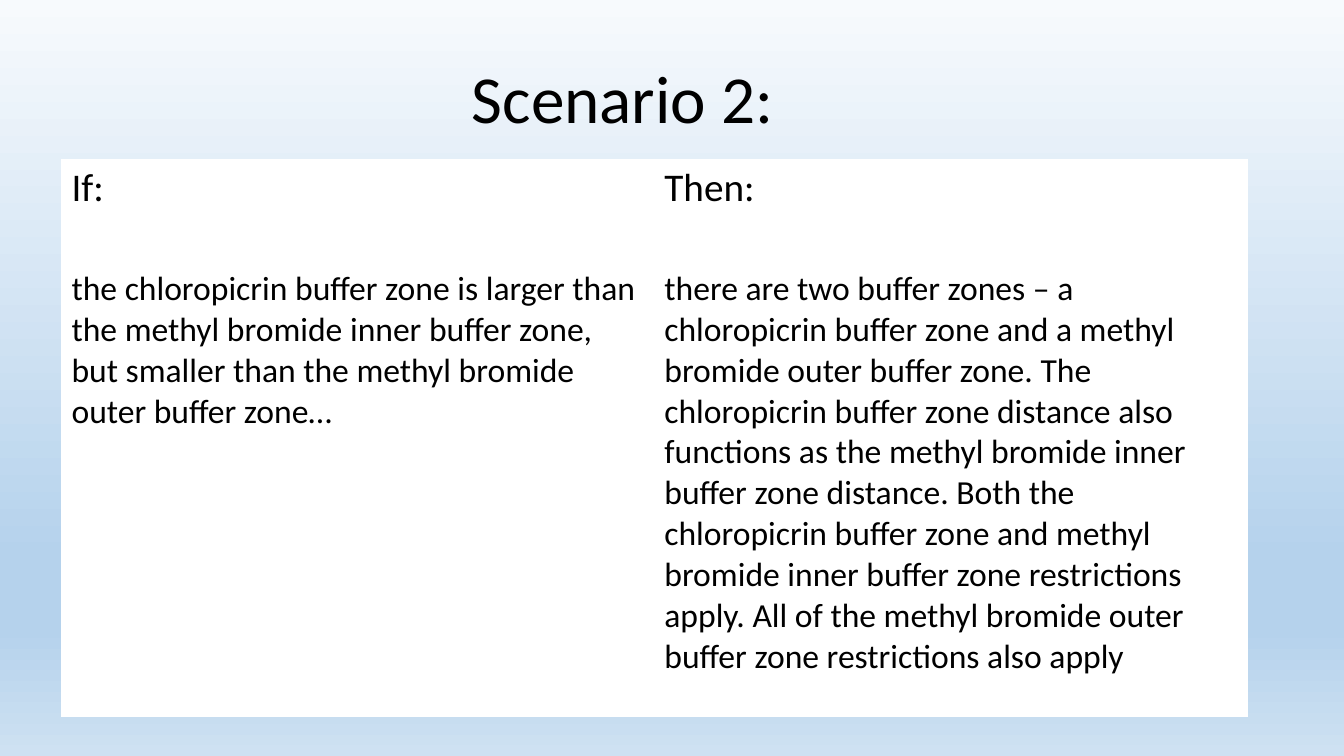
from copy import deepcopy
from dataclasses import dataclass

from pptx import Presentation
from pptx.dml.color import RGBColor
from pptx.enum.text import MSO_ANCHOR, MSO_AUTO_SIZE, PP_ALIGN
from pptx.oxml.ns import qn
from pptx.slide import Slide
from pptx.text.text import TextFrame
from pptx.util import Inches, Pt

TOP = MSO_ANCHOR.TOP
LEFT = PP_ALIGN.LEFT
GROW = MSO_AUTO_SIZE.SHAPE_TO_FIT_TEXT

COLORS = {"ink": "000000", "cell": "FFFFFF", "pale": "F7FAFD", "blue": "B5D2EC", "mist": "CEE1F2"}
STOPS = [(0, "pale"), (0.74, "blue"), (0.83, "blue"), (1, "mist")]


@dataclass
class Row:
    height: float
    size: int
    texts: tuple[str, str]


ROWS = [
    Row(1.03, 28, ("If:", "Then:")),
    Row(4.5, 24, (
        "the chloropicrin buffer zone is larger than the methyl bromide inner buffer zone, "
        "but smaller than the methyl bromide outer buffer zone…",
        "there are two buffer zones – a chloropicrin buffer zone and a methyl bromide outer "
        "buffer zone. The chloropicrin buffer zone distance also functions as the methyl "
        "bromide inner buffer zone distance. Both the chloropicrin buffer zone and methyl "
        "bromide inner buffer zone restrictions apply. All of the methyl bromide outer "
        "buffer zone restrictions also apply",
    )),
]


def color(name: str) -> RGBColor:
    return RGBColor.from_string(COLORS[name])


def write(frame: TextFrame, text: str, size: int) -> None:
    frame.text = text
    para = frame.paragraphs[0]
    para.alignment = LEFT
    font = para.runs[0].font
    for key, value in {"name": "Calibri", "size": Pt(size), "bold": False}.items():
        setattr(font, key, value)
    font.color.rgb = color("ink")


def paint_back(slide: Slide) -> None:
    fill = slide.background.fill
    fill.gradient()
    fill.gradient_angle = 270
    stops = slide.element.find(".//" + qn("a:gsLst"))
    while len(stops) < len(STOPS):
        stops.append(deepcopy(stops[-1]))
    for stop, (place, name) in zip(fill.gradient_stops, STOPS):
        stop.position = place
        stop.color.rgb = color(name)


def add_title(slide: Slide) -> None:
    title = slide.shapes.title
    box = {"left": 4.58, "top": 0.51, "width": 3.4, "height": 0.91}
    for key, value in box.items():
        setattr(title, key, Inches(value))
    frame = title.text_frame
    for key, value in {"word_wrap": True, "auto_size": GROW, "vertical_anchor": TOP}.items():
        setattr(frame, key, value)
    write(frame, "Scenario 2:", 48)


def add_rules(slide: Slide) -> None:
    """Add the table of condition and outcome."""
    high = sum(row.height for row in ROWS)
    table = slide.shapes.add_table(
        len(ROWS), 2, Inches(0.61), Inches(1.58), Inches(11.76), Inches(high)).table
    table.first_row = table.horz_banding = False
    for i, row in enumerate(ROWS):
        table.rows[i].height = Inches(row.height)
        for j, text in enumerate(row.texts):
            cell = table.cell(i, j)
            cell.fill.solid()
            cell.fill.fore_color.rgb = color("cell")
            write(cell.text_frame, text, row.size)


def main() -> None:
    deck = Presentation()
    deck.slide_width, deck.slide_height = Inches(13.33), Inches(7.5)
    slide = deck.slides.add_slide(deck.slide_layouts[5])
    paint_back(slide)
    add_title(slide)
    add_rules(slide)
    deck.save("out.pptx")


if __name__ == "__main__":
    main()
